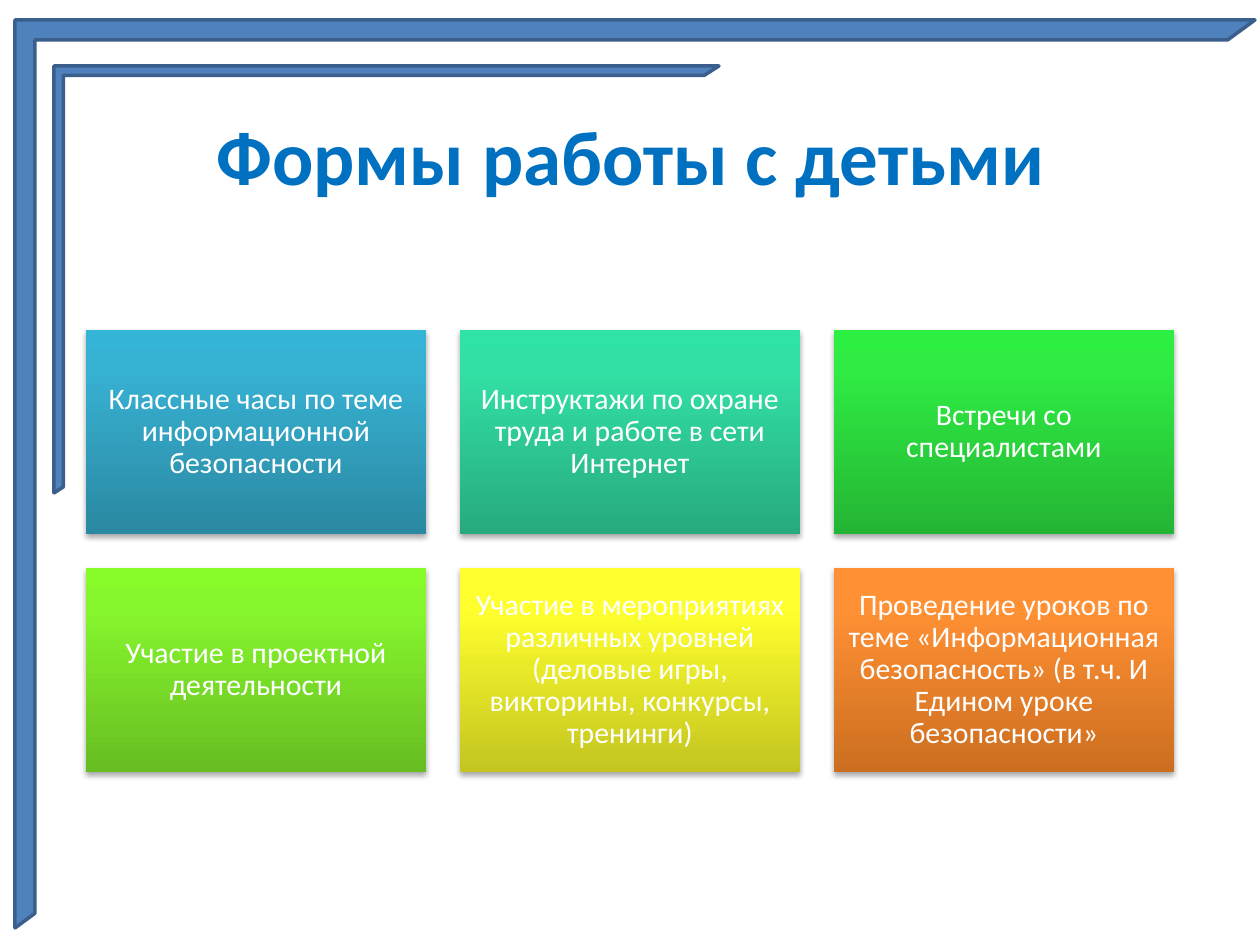
from lxml import etree
from pptx import Presentation
from pptx.dml.color import RGBColor
from pptx.enum.shapes import MSO_SHAPE as SHAPE
from pptx.enum.text import MSO_ANCHOR as ANCHOR, PP_ALIGN as ALIGN
from pptx.oxml import parse_xml
from pptx.oxml.ns import nsdecls, qn
from pptx.util import Pt

PX = 914400 / 126
TITLE = "Формы работы с детьми"
FRAMES = [(54, 66, 665, 427), (15, 20, 1240, 908)]
CARDS = [
    ("Классные часы по теме информационной безопасности", ("2A88A2", "37B1D2", "34B4D6")),
    ("Инструктажи по охране труда и работе в сети Интернет", ("27AB7E", "32DFA4", "2FE3A6")),
    ("Встречи со специалистами", ("24B534", "2FEB43", "2CEF41")),
    ("Участие в проектной деятельности", ("67BD22", "86F62D", "86FB29")),
    ("Участие в мероприятиях различных уровней (деловые игры, викторины, конкурсы, тренинги)",
     ("C4C521", "FEFF2C", "FEFF2D")),
    ("Проведение уроков по теме «Информационная безопасность» (в т.ч. И Едином уроке безопасности»",
     ("CC6E20", "FF9034", "FF9136")),
]
STOPS = (0, 80, 100)
COLS, LEFT, TOP, CARD_W, CARD_H, GAP = 3, 86, 330, 340, 204, 34


def px(n):
    """Convert px to EMU."""
    return round(n * PX)


def color(value):
    """Turn a hex string into a colour."""
    return RGBColor.from_string(value)


def write(s, text, size, fill, bold=False, spacing=1.0, inset=9):
    """Put centred text in a shape."""
    tf = s.text_frame
    tf.word_wrap = True
    tf.vertical_anchor = ANCHOR.MIDDLE
    tf.margin_left = tf.margin_right = tf.margin_top = tf.margin_bottom = px(inset)
    p = tf.paragraphs[0]
    p.alignment = ALIGN.CENTER
    p.line_spacing = spacing
    r = p.add_run()
    r.text = text
    r.font.name = "Calibri"
    r.font.size = Pt(size)
    r.font.bold = bold
    r.font.color.rgb = color(fill)


def add_shape(slide, kind, box):
    """Add a preset shape without the theme shadow."""
    s = slide.shapes.add_shape(kind, *map(px, box))
    s.shadow.inherit = False
    return s


def add_frame(slide, box):
    """Add a corner frame."""
    s = add_shape(slide, SHAPE.HALF_FRAME, box)
    s.adjustments[0] = s.adjustments[1] = 0.022
    s.fill.solid()
    s.fill.fore_color.rgb = color("4F81BD")
    s.line.color.rgb = color("3A5F8C")
    s.line.width = Pt(2)


def add_card(slide, box, text, colors):
    """Add a gradient card with a soft shadow."""
    s = add_shape(slide, SHAPE.RECTANGLE, box)
    s.line.fill.background()
    stops = "".join(f'<a:gs pos="{pos * 1000}"><a:srgbClr val="{c}"/></a:gs>'
                    for pos, c in zip(STOPS, colors))
    sp = s._element.spPr
    sp.find(qn("a:prstGeom")).addnext(parse_xml(
        f'<a:gradFill {nsdecls("a")} rotWithShape="1"><a:gsLst>{stops}</a:gsLst>'
        '<a:lin ang="16200000" scaled="0"/></a:gradFill>'))
    shadow = etree.SubElement(sp.find(qn("a:effectLst")), qn("a:outerShdw"), blurRad="40000",
                              dist="23000", dir="5400000", rotWithShape="0")
    black = etree.SubElement(shadow, qn("a:srgbClr"), val="000000")
    etree.SubElement(black, qn("a:alpha"), val="35000")
    write(s, text, 17, "FFFFFF", spacing=0.9)


def main():
    """Build the slide."""
    prs = Presentation()
    prs.slide_width, prs.slide_height = px(1260), px(945)
    slide = prs.slides.add_slide(prs.slide_layouts[6])
    for box in FRAMES:
        add_frame(slide, box)
    title = slide.shapes.add_textbox(*map(px, (64, 76, 1134, 157)))
    write(title, TITLE, 44, "0070C0", bold=True)
    for i, (text, colors) in enumerate(CARDS):
        row, col = divmod(i, COLS)
        box = (LEFT + col * (CARD_W + GAP), TOP + row * (CARD_H + GAP), CARD_W, CARD_H)
        add_card(slide, box, text, colors)
    prs.save("out.pptx")


if __name__ == "__main__":
    main()
